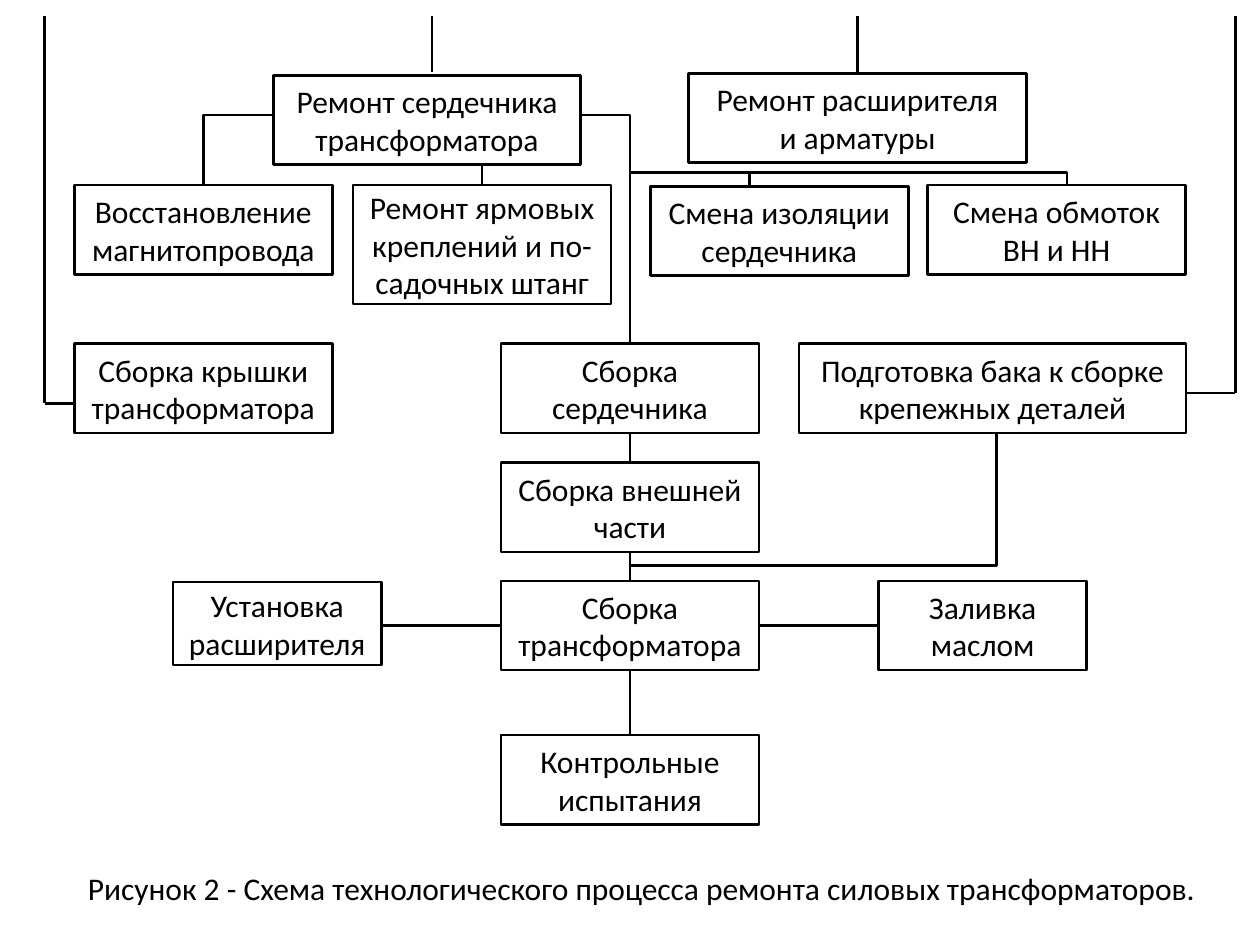
"""Build the flow chart of power transformer repair."""
from dataclasses import dataclass
from typing import Optional

import pptx
import pptx.dml.color
import pptx.enum.shapes
import pptx.enum.text
import pptx.oxml
import pptx.oxml.ns
import pptx.util

Cm = pptx.util.Cm
COLORS = {"ink": "000000"}
FONT = "Calibri"
SIZE = pptx.util.Pt(18)
WIDTH = pptx.util.Pt(1.5)
TOP, LEFT, BOTTOM, RIGHT = range(4)
Point = tuple[float, float]


@dataclass
class Box:
    key: str
    text: str
    x: float
    y: float
    w: float = 5.2
    h: float = 1.8


@dataclass
class Wire:
    start: Point
    end: Point
    begin_at: Optional[tuple[str, int]] = None
    end_at: Optional[tuple[str, int]] = None


MID = 12.7
COL = 10.1
EDGE = 1.5
ROW = 3.73
BUILD = 6.93
UNIT = 11.71
AXIS = UNIT + 0.9
RAIL = 3.48
WEST = 0.9
EAST = 24.9

BOXES = [
    Box("core", "Ремонт сердечника\nтрансформатора", 5.51, 1.52, 6.2),
    Box("tank", "Ремонт расширителя\nи арматуры", 13.88, 1.48, 6.82),
    Box("magnet", "Восстановление\nмагнитопровода", EDGE, ROW),
    Box("yoke", "Ремонт ярмовых\nкреплений и по-\nсадочных штанг", 7.12, ROW, h=2.4),
    Box("cover", "Смена изоляции\nсердечника", 13.11, 3.76),
    Box("coil", "Смена обмоток\nВН и НН", 18.7, ROW),
    Box("lid", "Сборка крышки\nтрансформатора", EDGE, BUILD),
    Box("frame", "Сборка\nсердечника", COL, BUILD),
    Box("base", "Подготовка бака к сборке\nкрепежных деталей", 16.11, BUILD, 7.8),
    Box("outer", "Сборка внешней\nчасти", COL, 9.33),
    Box("unit", "Сборка\nтрансформатора", COL, UNIT),
    Box("oil", "Заливка\nмаслом", 17.71, UNIT, 4.2),
    Box("mount", "Установка\nрасширителя", 3.49, 11.73, 4.2, 1.68),
    Box("test", "Контрольные\nиспытания", COL, 14.82),
]

WIRES = [
    Wire((8.71, 1.45), (8.71, 0.33)),
    Wire((17.29, 1.48), (17.29, 0.33), ("tank", TOP)),
    Wire((EAST, 7.92), (EAST, 0.33)),
    Wire((EAST, 7.92), (23.91, 7.92)),
    Wire((WEST, 8.13), (WEST, 0.33)),
    Wire((WEST, 8.13), (EDGE, 8.13)),
    Wire((9.72, ROW), (9.72, 3.32), ("yoke", TOP)),
    Wire((MID, 9.33), (MID, 8.73), ("outer", TOP), ("frame", BOTTOM)),
    Wire((MID, UNIT), (MID, 11.13), ("unit", TOP), ("outer", BOTTOM)),
    Wire((MID, 14.82), (MID, 13.51), ("test", TOP), ("unit", BOTTOM)),
    Wire((15.3, AXIS), (17.71, AXIS), ("unit", RIGHT), ("oil", LEFT)),
    Wire((7.69, AXIS), (COL, AXIS), end_at=("unit", LEFT)),
]

BENDS: list[list[Point]] = [
    [(4.1, ROW), (4.1, 2.32), (5.51, 2.32)],
    [(11.71, 2.32), (MID, 2.32), (MID, BUILD)],
    [(MID, RAIL), (15.11, RAIL), (15.11, 3.76)],
    [(15.11, RAIL), (21.51, RAIL), (21.51, ROW)],
    [(MID, 11.4), (20.09, 11.4), (20.09, 8.73)],
]


def ink() -> pptx.dml.color.RGBColor:
    """Return the one colour in use."""
    return pptx.dml.color.RGBColor.from_string(COLORS["ink"])


def style_line(line) -> None:
    """Give a line its colour and width."""
    line.color.rgb = ink()
    line.width = WIDTH


def set_text(frame, text: str, wrap: bool) -> None:
    """Write centred text into a frame."""
    frame.text = text
    frame.word_wrap = wrap
    frame.vertical_anchor = pptx.enum.text.MSO_ANCHOR.MIDDLE
    for para in frame.paragraphs:
        para.alignment = pptx.enum.text.PP_ALIGN.CENTER
        for run in para.runs:
            run.font.name = FONT
            run.font.size = SIZE
            run.font.color.rgb = ink()


def draw_box(shapes, box: Box):
    """Draw one step and return its shape."""
    kind = pptx.enum.shapes.MSO_SHAPE.RECTANGLE
    shape = shapes.add_shape(kind, Cm(box.x), Cm(box.y), Cm(box.w), Cm(box.h))
    shape.shadow.inherit = False
    shape.fill.background()
    style_line(shape.line)
    set_text(shape.text_frame, box.text, False)
    return shape


def draw_wire(shapes, wire: Wire, steps: dict) -> None:
    """Draw a straight line, joined to steps where it meets them."""
    kind = pptx.enum.shapes.MSO_CONNECTOR.STRAIGHT
    line = shapes.add_connector(kind, *map(Cm, wire.start + wire.end))
    if wire.begin_at:
        key, side = wire.begin_at
        line.begin_connect(steps[key], side)
    if wire.end_at:
        key, side = wire.end_at
        line.end_connect(steps[key], side)
    style_line(line.line)
    props = line._element.find(pptx.oxml.ns.qn("p:spPr"))
    props.append(pptx.oxml.parse_xml(
        f"<a:effectLst {pptx.oxml.ns.nsdecls('a')}/>"))


def draw_bend(shapes, points: list[Point]) -> None:
    """Draw an open line with corners."""
    spots = [(Cm(x), Cm(y)) for x, y in points]
    path = shapes.build_freeform(*spots[0])
    path.add_line_segments(spots[1:], close=False)
    shape = path.convert_to_shape()
    shape.shadow.inherit = False
    shape.fill.background()
    style_line(shape.line)


def main() -> None:
    """Build and save the slide."""
    deck = pptx.Presentation()
    deck.slide_width, deck.slide_height = Cm(25.4), Cm(19.05)
    shapes = deck.slides.add_slide(deck.slide_layouts.get_by_name("Blank")).shapes
    steps = {box.key: draw_box(shapes, box) for box in BOXES}
    for wire in WIRES:
        draw_wire(shapes, wire, steps)
    for points in BENDS:
        draw_bend(shapes, points)
    note = shapes.add_textbox(Cm(0.69), Cm(17.02), Cm(24.49), Cm(1.78))
    set_text(note.text_frame, "Рисунок 2 - Схема технологического процесса "
             "ремонта силовых трансформаторов.", True)
    deck.save("out.pptx")


if __name__ == "__main__":
    main()
